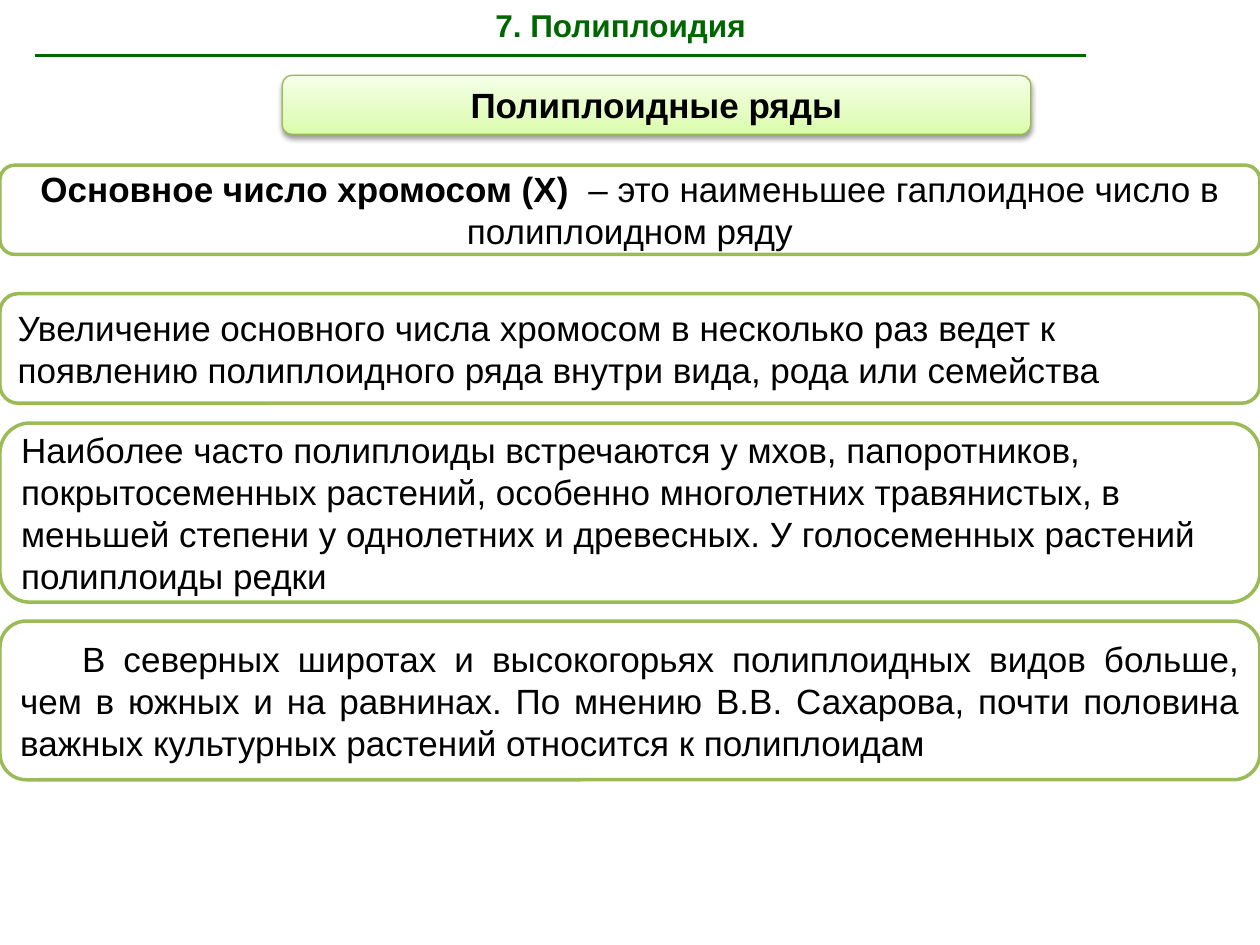
from copy import deepcopy
from dataclasses import dataclass

from lxml import etree
from pptx import Presentation
from pptx import util as u
from pptx.dml.color import RGBColor
from pptx.enum import shapes, text
from pptx.oxml import ns

Cm, Pt = u.Cm, u.Pt
ALIGN = text.PP_ALIGN
SLIDE_WIDTH, SLIDE_HEIGHT = 25.4, 19.05
BLACK, WHITE, DARK_GREEN, LEAF_GREEN = "000000", "FFFFFF", "006600", "9BBB59"


@dataclass(frozen=True)
class Run:
    wording: str
    bold: bool = False
    size: float = 20
    color: str = BLACK


@dataclass(frozen=True)
class Panel:
    top: float
    height: float
    runs: tuple[Run, ...]
    align: ALIGN = ALIGN.LEFT
    indent: float = 0
    left: float = 0
    width: float = SLIDE_WIDTH
    outline: str = LEAF_GREEN
    outline_width: float = 2


HEADING = Panel(1.52, 1.19, (Run("Полиплоидные ряды", True),), ALIGN.CENTER,
                left=5.69, width=15.09, outline="98B955", outline_width=0.75)
STATEMENTS = (
    Panel(3.33, 1.8, (
        Run("Основное число хромосом (Х) ", True),
        Run(" – это наименьшее гаплоидное число в полиплоидном ряду"),
    ), ALIGN.CENTER),
    Panel(5.92, 2.21, (Run(
        "Увеличение основного числа хромосом в несколько раз ведет к "
        "появлению полиплоидного ряда внутри вида, рода или семейства"),)),
    Panel(8.53, 3.61, (Run(
        "Наиболее часто полиплоиды встречаются у мхов, папоротников, "
        "покрытосеменных растений, особенно многолетних травянистых, в "
        "меньшей степени у однолетних и древесных. У голосеменных растений "
        "полиплоиды редки"),)),
    Panel(12.52, 3.2, (Run(
        "В северных широтах и высокогорьях полиплоидных видов больше, "
        "чем в южных и на равнинах. По мнению В.В. Сахарова, почти половина "
        "важных культурных растений относится к полиплоидам"),),
        ALIGN.JUSTIFY, indent=1.25),
)
HEADING_GRADIENT = ((0, "DAFDA7"), (0.35, "E4FCC2"), (1, "F5FFE7"))


def rgb(value: str) -> RGBColor:
    return RGBColor.from_string(value)


def set_attributes(target, values: dict) -> None:
    for attribute, value in values.items():
        setattr(target, attribute, value)


def write_text(frame, runs: tuple[Run, ...], align: ALIGN, anchor) -> None:
    set_attributes(frame, {
        "word_wrap": True,
        "auto_size": text.MSO_AUTO_SIZE.NONE,
        "vertical_anchor": anchor,
    })
    paragraph = frame.paragraphs[0]
    paragraph.alignment = align
    for part in runs:
        run = paragraph.add_run()
        run.text = part.wording
        set_attributes(run.font, {
            "name": "Arial", "size": Pt(part.size), "bold": part.bold})
        run.font.color.rgb = rgb(part.color)


def draw_panel(slide, panel: Panel):
    box = slide.shapes.add_shape(
        shapes.MSO_SHAPE.ROUNDED_RECTANGLE, Cm(panel.left), Cm(panel.top),
        Cm(panel.width), Cm(panel.height))
    box.shadow.inherit = False
    box.fill.solid()
    box.fill.fore_color.rgb = rgb(WHITE)
    box.line.color.rgb = rgb(panel.outline)
    box.line.width = Pt(panel.outline_width)
    write_text(box.text_frame, panel.runs, panel.align, text.MSO_ANCHOR.MIDDLE)
    if panel.indent:
        properties = box.text_frame.paragraphs[0]._p.get_or_add_pPr()
        properties.set("indent", str(Cm(panel.indent)))
    return box


def draw_heading(slide, panel: Panel) -> None:
    heading = draw_panel(slide, panel)
    heading.fill.gradient()
    heading.fill.gradient_angle = 90
    stop_list = heading._element.spPr.find(".//" + ns.qn("a:gsLst"))
    stop_list.append(deepcopy(stop_list[0]))
    for stop, (position, color) in zip(heading.fill.gradient_stops, HEADING_GRADIENT):
        stop.position = position
        stop.color.rgb = rgb(color)
    effects = heading._element.spPr.find(ns.qn("a:effectLst"))
    shadow = etree.SubElement(effects, ns.qn("a:outerShdw"), {
        "blurRad": str(Pt(3.1)), "dist": str(Pt(1.6)),
        "dir": "5400000", "rotWithShape": "0"})
    shade = etree.SubElement(shadow, ns.qn("a:srgbClr"), val=BLACK)
    etree.SubElement(shade, ns.qn("a:alpha"), val="38000")


def draw_title(slide) -> None:
    title = slide.shapes.title
    set_attributes(title, {
        "left": Cm(3.91), "top": Cm(0), "width": Cm(17.2), "height": Cm(1.02)})
    write_text(title.text_frame, (Run("7. Полиплоидия", True, 18, DARK_GREEN),),
               ALIGN.CENTER, text.MSO_ANCHOR.TOP)


def draw_title_rule(slide) -> None:
    rule = slide.shapes.add_connector(
        shapes.MSO_CONNECTOR.STRAIGHT, Cm(0.71), Cm(1.12), Cm(21.89), Cm(1.12))
    rule.line.color.rgb = rgb(DARK_GREEN)
    rule.line.width = Pt(2)
    etree.SubElement(rule._element.spPr, ns.qn("a:effectLst"))


def main() -> None:
    deck = Presentation()
    set_attributes(deck, {
        "slide_width": Cm(SLIDE_WIDTH), "slide_height": Cm(SLIDE_HEIGHT)})
    slide = deck.slides.add_slide(deck.slide_layouts[5])
    draw_title(slide)
    draw_title_rule(slide)
    draw_heading(slide, HEADING)
    for statement in STATEMENTS:
        draw_panel(slide, statement)
    deck.save("out.pptx")


if __name__ == "__main__":
    main()
